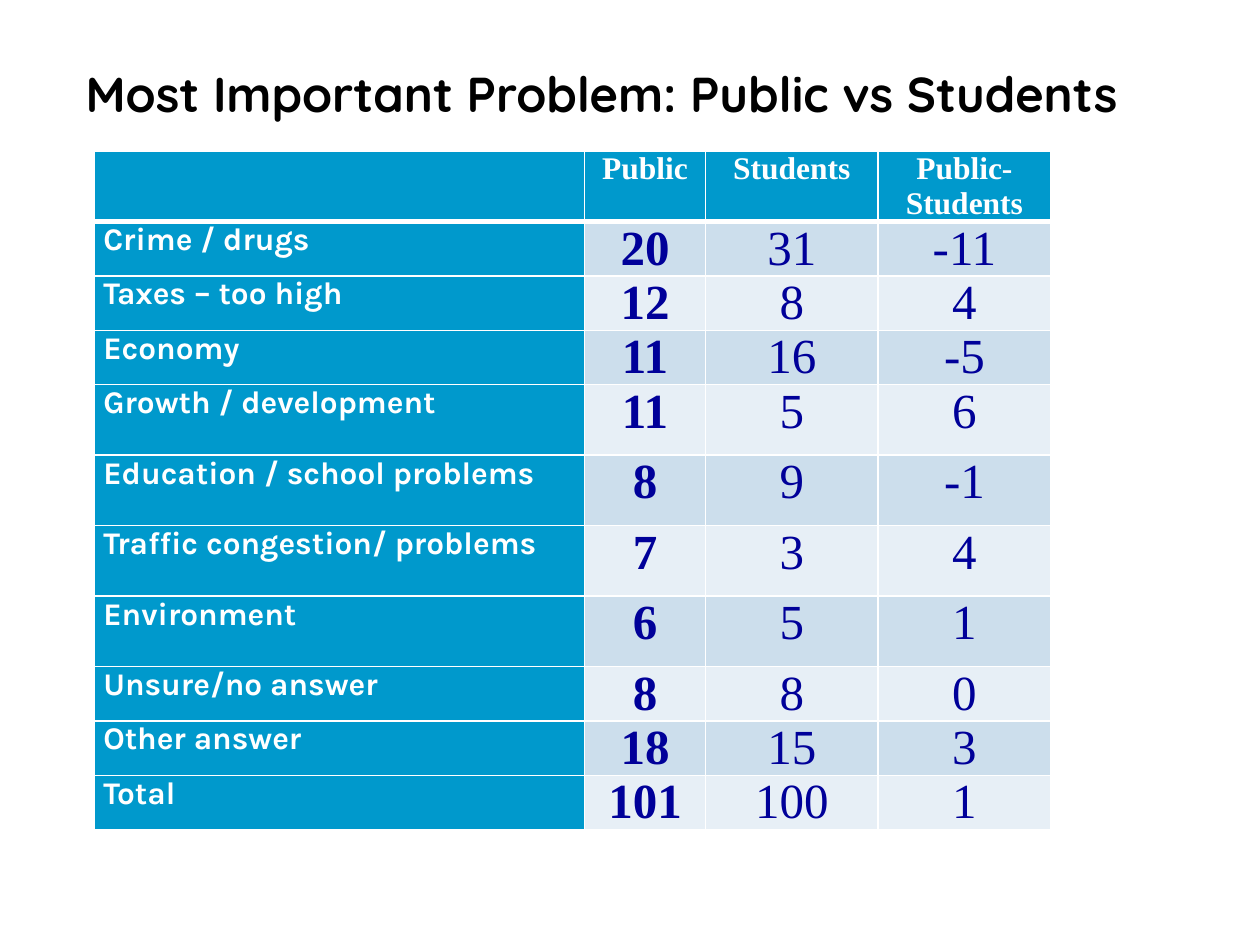
from pptx import Presentation
from pptx.dml.color import RGBColor
from pptx.enum.text import MSO_ANCHOR, PP_ALIGN
from pptx.oxml.ns import qn
from pptx.util import Inches, Pt
from lxml.etree import SubElement

# Content
TITLE = "Most Important Problem: Public vs Students"
ROWS = [
    ("", "Public", "Students", "Public-Students"),
    ("Crime / drugs", "20", "31", "-11"),
    ("Taxes – too high", "12", "8", "4"),
    ("Economy", "11", "16", "-5"),
    ("Growth / development", "11", "5", "6"),
    ("Education / school problems", "8", "9", "-1"),
    ("Traffic congestion/ problems", "7", "3", "4"),
    ("Environment", "6", "5", "1"),
    ("Unsure/no answer", "8", "8", "0"),
    ("Other answer", "18", "15", "3"),
    ("Total", "101", "100", "1"),
]

# Layout and style
COLUMN_WIDTHS = (3.89, 0.96, 1.37, 1.37)
TALL_ROWS = (0, 4, 5, 6, 7)
ROW_HEIGHTS = [0.56 if row in TALL_ROWS else 0.43 for row in range(len(ROWS))]
BLACK = RGBColor(0x00, 0x00, 0x00)
WHITE = RGBColor(0xFF, 0xFF, 0xFF)
BLUE = RGBColor(0x00, 0x99, 0xCC)
NAVY = RGBColor(0x00, 0x00, 0x99)
BANDS = (RGBColor(0xE7, 0xEF, 0xF6), RGBColor(0xCC, 0xDE, 0xEC))


def set_font(paragraph, name, size, color, bold):
    font = paragraph.font
    font.name, font.size, font.bold = name, Pt(size), bold
    font.color.rgb = color


def add_borders(cell, widths):
    """Draw white borders; the lines must precede the fill in the cell."""
    properties = cell._tc.get_or_add_tcPr()
    for side, width in widths.items():
        line = SubElement(properties, qn(f"a:{side}"), w=str(Pt(width)))
        fill = SubElement(line, qn("a:solidFill"))
        SubElement(fill, qn("a:srgbClr"), val=str(WHITE))


def format_cell(cell, text, row, column):
    bottom = 3 if row == 0 else 1
    top = 3 if row == 1 else 1
    add_borders(cell, {"lnL": 1, "lnR": 1, "lnT": top, "lnB": bottom})
    is_heading = row == 0 or column == 0
    cell.fill.solid()
    cell.fill.fore_color.rgb = BLUE if is_heading else BANDS[row % 2]
    cell.margin_left = cell.margin_right = Inches(0.07)
    cell.margin_top = cell.margin_bottom = 0
    cell.text = text
    paragraph = cell.text_frame.paragraphs[0]
    paragraph.alignment = PP_ALIGN.LEFT if column == 0 else PP_ALIGN.CENTER
    set_font(
        paragraph,
        "Karla" if column == 0 else "Times New Roman",
        18 if is_heading else 28,
        WHITE if is_heading else NAVY,
        is_heading or column == 1,
    )


presentation = Presentation()
presentation.slide_width, presentation.slide_height = Inches(10), Inches(7.5)
slide = presentation.slides.add_slide(presentation.slide_layouts[5])

# Title
title = slide.shapes.title
title.left, title.top = Inches(0.58), Inches(0.42)
title.width, title.height = Inches(9.25), Inches(0.6)
title.text_frame.text = TITLE
title.text_frame.vertical_anchor = MSO_ANCHOR.BOTTOM
title.text_frame.paragraphs[0].alignment = PP_ALIGN.LEFT
set_font(title.text_frame.paragraphs[0], "Quicksand", 28, BLACK, True)

# Table
table = slide.shapes.add_table(
    len(ROWS), len(COLUMN_WIDTHS), Inches(0.75), Inches(1.2),
    Inches(sum(COLUMN_WIDTHS)), Inches(sum(ROW_HEIGHTS))).table
table.first_col = True
for column, width in zip(table.columns, COLUMN_WIDTHS):
    column.width = Inches(width)
for row, height in zip(table.rows, ROW_HEIGHTS):
    row.height = Inches(height)
for row, values in enumerate(ROWS):
    for column, text in enumerate(values):
        format_cell(table.cell(row, column), text, row, column)

presentation.save("out.pptx")
